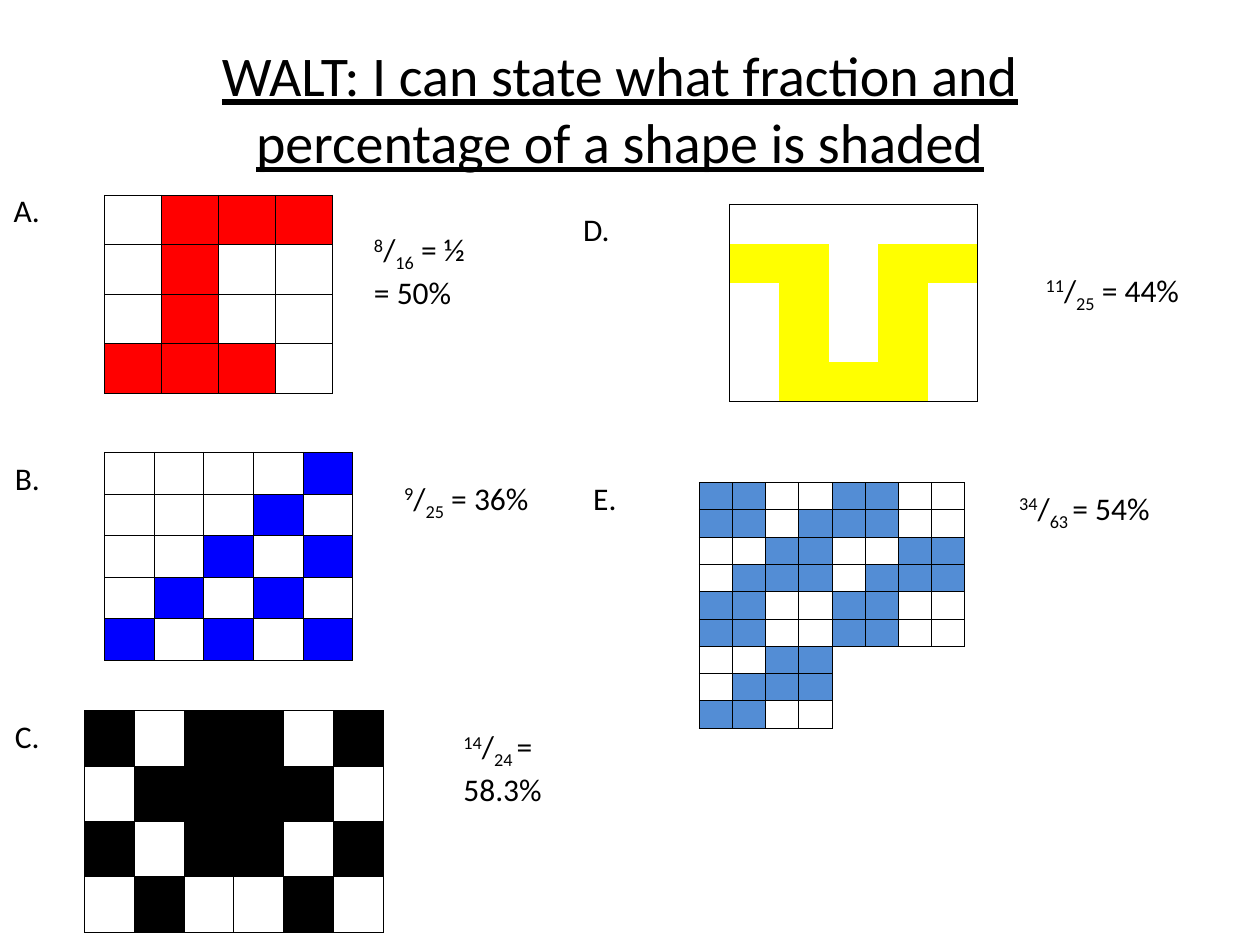
import dataclasses

import lxml.etree
import pptx
import pptx.dml.color
import pptx.enum.text
import pptx.oxml.ns
import pptx.util

Inches = pptx.util.Inches
Pt = pptx.util.Pt
qn = pptx.oxml.ns.qn


@dataclasses.dataclass(frozen=True)
class Theme:
    font: str = "Calibri"
    ink: str = "000000"
    red: str = "FF0000"
    blue: str = "0000FF"
    yellow: str = "FFFF00"
    sky: str = "538DD5"
    title_size: int = 32
    body_size: int = 18
    cell_size: int = 8
    border: float = 0.5
    superscript: int = 30000
    subscript: int = -25000


class Worksheet:
    def __init__(self, slide, theme):
        self.slide = slide
        self.theme = theme

    def run(self, paragraph, text, size, baseline=0, underline=False):
        run = paragraph.add_run()
        run.text = text
        run.font.name = self.theme.font
        run.font.size = Pt(size)
        run.font.color.rgb = pptx.dml.color.RGBColor.from_string(self.theme.ink)
        if underline:
            run.font.underline = True
        if baseline:
            run.font._element.set("baseline", str(baseline))

    def text_frame(self, left, top, width, height):
        box = self.slide.shapes.add_textbox(
            Inches(left), Inches(top), Inches(width), Inches(height)
        )
        box.text_frame.word_wrap = True
        return box.text_frame

    def title(self, text):
        frame = self.text_frame(0.67, 0.05, 8.5, 1.61)
        frame.vertical_anchor = pptx.enum.text.MSO_ANCHOR.MIDDLE
        heading = frame.paragraphs[0]
        heading.alignment = pptx.enum.text.PP_ALIGN.CENTER
        self.run(heading, text, self.theme.title_size, underline=True)

    def letter(self, left, top, text):
        frame = self.text_frame(left, top, 0.63, 0.4)
        self.run(frame.paragraphs[0], text, self.theme.body_size)

    def answer(self, left, top, height, numerator, denominator, result, second_line=None):
        frame = self.text_frame(left, top, 1.34, height)
        fraction = frame.paragraphs[0]
        size = self.theme.body_size
        self.run(fraction, numerator, size, self.theme.superscript)
        self.run(fraction, "/", size)
        self.run(fraction, denominator, size, self.theme.subscript)
        self.run(fraction, result, size)
        if second_line:
            self.run(frame.add_paragraph(), second_line, size)

    def edge(self, properties, tag, drawn):
        line = lxml.etree.SubElement(properties, qn(tag), w=str(Pt(self.theme.border)))
        if drawn:
            fill = lxml.etree.SubElement(line, qn("a:solidFill"))
            lxml.etree.SubElement(fill, qn("a:srgbClr"), val=self.theme.ink)
        else:
            lxml.etree.SubElement(line, qn("a:noFill"))

    def shaded_grid(self, left, top, width, height, color, pattern, gridlines=True):
        """Pattern marks: # shaded, . unshaded, - outside the shape."""
        rows, columns = len(pattern), len(pattern[0])
        table = self.slide.shapes.add_table(
            rows, columns, Inches(left), Inches(top), Inches(width), Inches(height)
        ).table
        table.first_row = False
        table.horz_banding = False

        def inside(row, column):
            return (
                0 <= row < rows
                and 0 <= column < columns
                and pattern[row][column] != "-"
            )

        sides = {"a:lnL": (0, -1), "a:lnR": (0, 1), "a:lnT": (-1, 0), "a:lnB": (1, 0)}
        for row, marks in enumerate(pattern):
            for column, mark in enumerate(marks):
                cell = table.cell(row, column)
                cell.margin_left = cell.margin_right = 0
                cell.margin_top = cell.margin_bottom = 0
                properties = cell._tc.get_or_add_tcPr()
                here = inside(row, column)
                for tag, (down, across) in sides.items():
                    there = inside(row + down, column + across)
                    self.edge(properties, tag, here != there or (here and gridlines))
                if mark == "#":
                    cell.fill.solid()
                    cell.fill.fore_color.rgb = pptx.dml.color.RGBColor.from_string(color)
                else:
                    cell.fill.background()
                lxml.etree.SubElement(
                    cell.text_frame.paragraphs[0]._p,
                    qn("a:endParaRPr"),
                    sz=str(self.theme.cell_size * 100),
                )


def main():
    deck = pptx.Presentation()
    deck.slide_width = Inches(10)
    deck.slide_height = Inches(7.5)
    theme = Theme()
    sheet = Worksheet(deck.slides.add_slide(deck.slide_layouts[6]), theme)

    sheet.title("WALT: I can state what fraction and percentage of a shape is shaded")

    sheet.shaded_grid(
        0.67, 5.64, 2.37, 1.76, theme.ink,
        ["#.##.#", ".####.", "#.##.#", ".#..#."],
    )
    sheet.shaded_grid(
        0.83, 1.55, 1.81, 1.57, theme.red,
        [".###", ".#..", ".#..", "###."],
    )
    sheet.shaded_grid(
        0.83, 3.59, 1.97, 1.65, theme.blue,
        ["....#", "...#.", "..#.#", ".#.#.", "#.#.#"],
    )
    sheet.shaded_grid(
        5.79, 1.62, 1.97, 1.57, theme.yellow,
        [".....", "##.##", ".#.#.", ".#.#.", ".###."],
        gridlines=False,
    )
    sheet.shaded_grid(
        5.55, 3.83, 2.11, 1.95, theme.sky,
        [
            "##..##..",
            "##.###..",
            "..##..##",
            ".###.###",
            "##..##..",
            "##..##..",
            "..##----",
            ".###----",
            "##..----",
        ],
    )

    for left, top, letter in [
        (0.01, 1.47, "A."),
        (0.02, 3.59, "B."),
        (0.02, 5.64, "C."),
        (4.53, 1.62, "D."),
        (4.61, 3.75, "E."),
    ]:
        sheet.letter(left, top, letter)

    sheet.answer(2.87, 1.78, 0.71, "8", "16", " = ½", "= 50%")
    sheet.answer(3.11, 3.75, 0.4, "9", "25", " = 36%")
    sheet.answer(3.58, 5.72, 0.71, "14", "24 ", "= 58.3%")
    sheet.answer(8.2, 2.1, 0.4, "11", "25", " = 44%")
    sheet.answer(7.99, 3.83, 0.4, "34", "63 ", "= 54%")

    deck.save("out.pptx")


if __name__ == "__main__":
    main()
